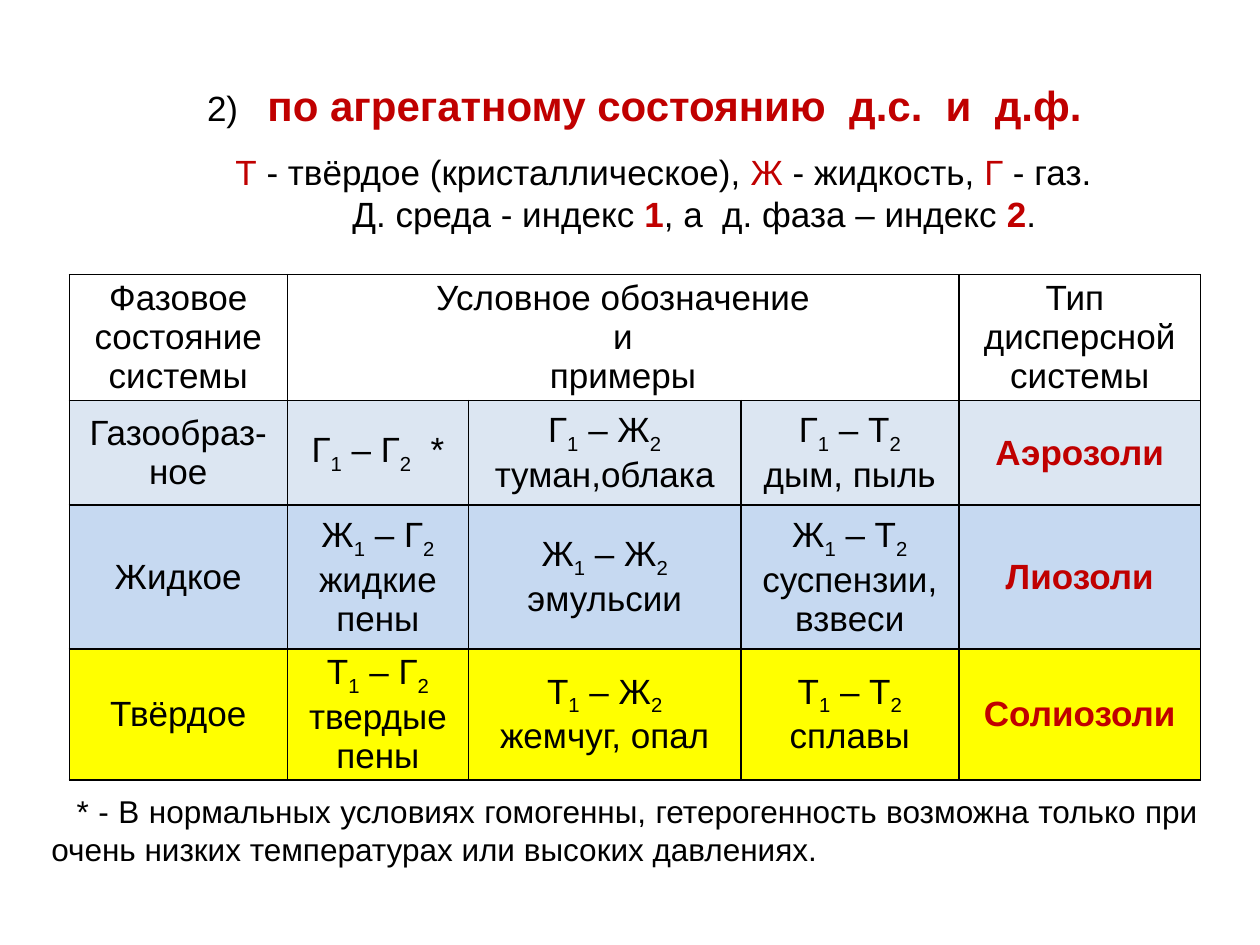
from dataclasses import dataclass

from lxml.etree import SubElement
from pptx import Presentation
from pptx.dml.color import RGBColor
from pptx.enum.text import MSO_ANCHOR as Anchor, PP_ALIGN as Align
from pptx.oxml.ns import qn
from pptx.util import Inches, Pt


@dataclass(frozen=True)
class Theme:
    font: str = "Arial"
    ink: str = "000000"
    accent: str = "C00000"
    gas: str = "DCE6F2"
    liquid: str = "C6D9F1"
    solid: str = "FFFF00"
    title: int = 24
    body: int = 20
    note: int = 18
    border: float = 1
    outline: float = 0.75


THEME = Theme()
COLUMNS = (1.73, 1.44, 2.16, 1.73, 1.92)
ROWS = (1, 0.83, 1.14, 1.04)
HEADINGS = {
    0: ["Фазовое состояние системы"],
    1: ["Условное обозначение", "и", "примеры"],
    4: ["Тип \vдисперсной системы"],
}
PHASES = ("Г", "Ж", "Т")
SYSTEMS = (
    ("Газообраз-ное", (None, "туман,облака", "дым, пыль"), "Аэрозоли", THEME.gas),
    ("Жидкое", ("жидкие пены", "эмульсии", "суспензии, взвеси"), "Лиозоли", THEME.liquid),
    ("Твёрдое", ("твердые пены", "жемчуг, опал", "сплавы"), "Солиозоли", THEME.solid),
)


def add_line(parent, tag, width, color):
    line = SubElement(parent, qn(tag), w=str(Pt(width)))
    fill = SubElement(line, qn("a:solidFill"))
    SubElement(fill, qn("a:srgbClr"), val=color)
    return line


def add_span(para, text, size=THEME.body, accent=False, bold=False, subscript=False):
    span = para.add_run()
    span.text = text
    font = span.font
    font.name, font.size, font.bold = THEME.font, Pt(size), bold
    font.color.rgb = RGBColor.from_string(THEME.accent if accent else THEME.ink)
    properties = span._r.get_or_add_rPr()
    if accent:
        properties.insert(0, add_line(properties, "a:ln", THEME.outline, THEME.ink))
    if subscript:
        properties.set("baseline", "-25000")


def add_para(frame, first, align=Align.CENTER, indent=0):
    para = frame.paragraphs[0] if first else frame.add_paragraph()
    para.alignment = align
    if indent:
        properties = para._p.get_or_add_pPr()
        properties.set("marL", "0")
        properties.set("indent", str(Inches(indent)))
    return para


def add_text_box(page, left, top, width, height):
    box = page.shapes.add_textbox(Inches(left), Inches(top), Inches(width), Inches(height))
    box.text_frame.word_wrap = True
    return box.text_frame


def add_heading(page, *area):
    frame = add_text_box(page, *area)
    frame.vertical_anchor = Anchor.MIDDLE
    frame.margin_bottom = 0

    title = add_para(frame, True)
    add_span(title, "2)   ")
    add_span(title, "по агрегатному состоянию  д.с.  и  д.ф.", THEME.title, True, True)

    legend = add_para(frame, False, Align.JUSTIFY, 0.79)
    legend.space_before = Pt(12)
    for symbol, meaning in (
        ("Т ", "- твёрдое (кристаллическое), "),
        ("Ж", " - жидкость, "),
        ("Г", " - газ. "),
    ):
        add_span(legend, symbol, accent=True)
        add_span(legend, meaning)

    indices = add_para(frame, False, indent=0.79)
    for label, index in (("Д. среда - индекс ", "1"), (", а  д. фаза – индекс ", "2")):
        add_span(indices, label)
        add_span(indices, index, accent=True, bold=True)
    add_span(indices, ".")


def style_cell(cell, color):
    cell.vertical_anchor = Anchor.MIDDLE
    cell.margin_left = cell.margin_right = Inches(0.07)
    cell.margin_top = cell.margin_bottom = 0
    properties = cell._tc.get_or_add_tcPr()
    for side in "LRTB":
        add_line(properties, f"a:ln{side}", THEME.border, THEME.ink)
    if color:
        cell.fill.solid()
        cell.fill.fore_color.rgb = RGBColor.from_string(color)
    else:
        cell.fill.background()


def write_lines(cell, lines, **style):
    for number, line in enumerate(lines):
        para = add_para(cell.text_frame, number == 0)
        for part, text in enumerate(line.split("\v")):
            if part:
                para.add_line_break()
            add_span(para, text, **style)


def write_formula(cell, medium, phase, example):
    para = add_para(cell.text_frame, True)
    add_span(para, medium)
    add_span(para, "1", subscript=True)
    add_span(para, f" – {phase}")
    add_span(para, "2", subscript=True)
    if example:
        add_span(add_para(cell.text_frame, False), example)
    else:
        add_span(para, "  *")


def add_systems_table(page, left, top):
    holder = page.shapes.add_table(
        len(ROWS), len(COLUMNS), Inches(left), Inches(top),
        Inches(sum(COLUMNS)), Inches(sum(ROWS)),
    )
    table = holder.table
    table.first_row = table.horz_banding = False
    for column, width in zip(table.columns, COLUMNS):
        column.width = Inches(width)
    for row, height in zip(table.rows, ROWS):
        row.height = Inches(height)

    colors = (None, *(system[-1] for system in SYSTEMS))
    for row, color in zip(table.rows, colors):
        for cell in row.cells:
            style_cell(cell, color)

    table.cell(0, 1).merge(table.cell(0, 3))
    for column, lines in HEADINGS.items():
        write_lines(table.cell(0, column), lines)
    for row, (medium, system) in enumerate(zip(PHASES, SYSTEMS), 1):
        state, examples, kind, _ = system
        write_lines(table.cell(row, 0), [state])
        for column, (phase, example) in enumerate(zip(PHASES, examples), 1):
            if row == 1 or column > 1:
                dispersed = phase
            else:
                dispersed = PHASES[0]
            write_formula(table.cell(row, column), medium, dispersed, example)
        write_lines(table.cell(row, 4), [kind], accent=True, bold=True)


def add_note(page, *area):
    para = add_para(add_text_box(page, *area), True, Align.JUSTIFY, 0.2)
    add_span(
        para,
        "* - В нормальных условиях гомогенны, гетерогенность возможна только при "
        "очень низких температурах или высоких давлениях.",
        THEME.note,
    )


def main():
    deck = Presentation()
    deck.slide_width, deck.slide_height = Inches(10), Inches(7.5)
    page = deck.slides.add_slide(deck.slide_layouts[6])
    add_systems_table(page, 0.55, 2.18)
    add_heading(page, 0.98, 0.57, 8.27, 1.3)
    add_note(page, 0.31, 6.24, 9.3, 0.71)
    deck.save("out.pptx")


if __name__ == "__main__":
    main()
